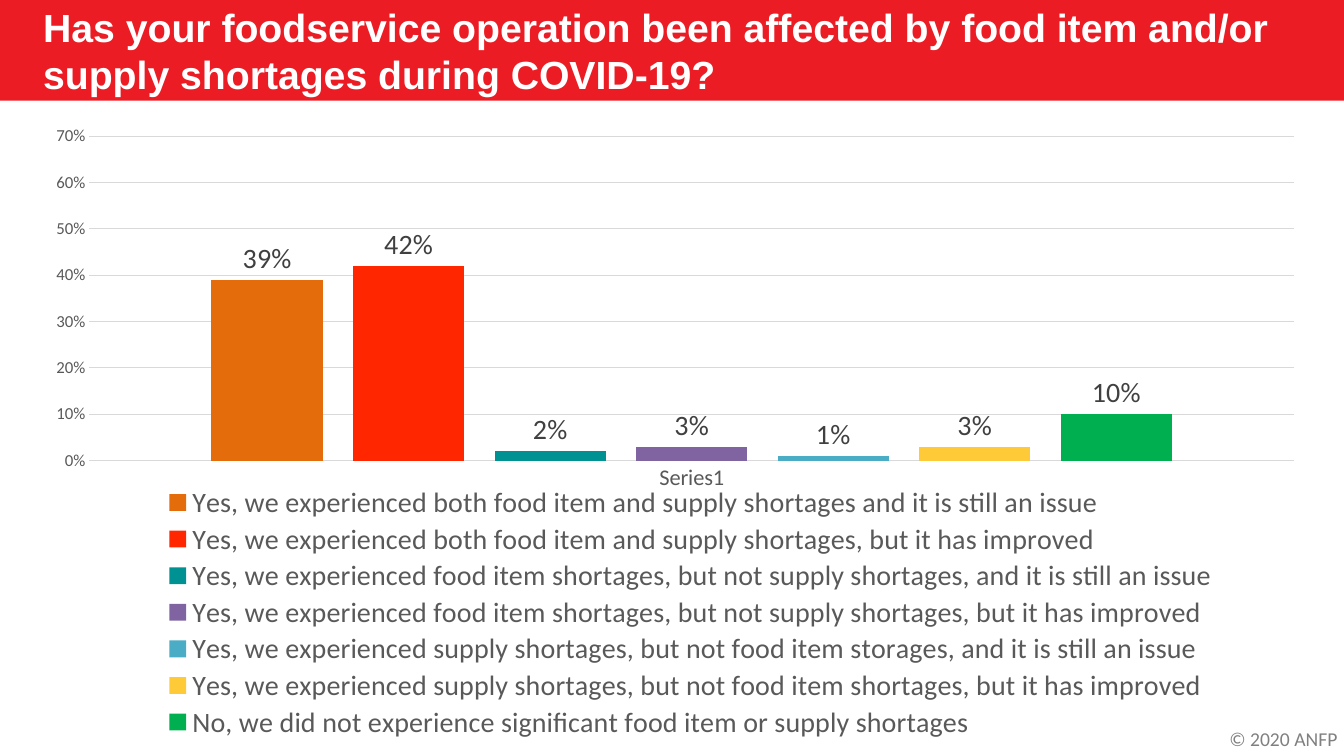
from lxml import etree
from pptx import Presentation
from pptx.chart.data import CategoryChartData
from pptx.dml.color import RGBColor
from pptx.enum.chart import XL_CHART_TYPE as ChartType, XL_LABEL_POSITION as LabelPos
from pptx.enum.chart import XL_LEGEND_POSITION as LegendPos, XL_TICK_MARK as TickMark
from pptx.enum.shapes import MSO_SHAPE as Shape
from pptx.enum.text import MSO_ANCHOR as Anchor, PP_ALIGN as Align
from pptx.oxml.ns import qn
from pptx.util import Inches, Pt

TITLE = ("Has your foodservice operation been affected by food item and/or "
         "supply shortages during COVID-19?")
COPYRIGHT = "© 2020 ANFP"
CATEGORY = "Series1"
ANSWERS = [
    ("Yes, we experienced both food item and supply shortages and it is still an issue", 0.39, "orange"),
    ("Yes, we experienced both food item and supply shortages, but it has improved", 0.42, "red"),
    ("Yes, we experienced food item shortages, but not supply shortages, and it is still an issue", 0.02, "teal"),
    ("Yes, we experienced food item shortages, but not supply shortages, but it has improved", 0.03, "purple"),
    ("Yes, we experienced supply shortages, but not food item storages, and it is still an issue", 0.01, "blue"),
    ("Yes, we experienced supply shortages, but not food item shortages, but it has improved", 0.03, "yellow"),
    ("No, we did not experience significant food item or supply shortages", 0.10, "green"),
]
COLORS = {
    "banner": "EC1C24", "title": "FFFFFF", "copyright": "808080",
    "text": "595959", "label": "404040", "grid": "D9D9D9", "base": "000000",
    "orange": "E46C0A", "red": "FF2600", "teal": "009193", "purple": "8064A2",
    "blue": "4BACC6", "yellow": "FFCA38", "green": "00B050",
}
WIDTH, HEIGHT = 13.33, 7.5
BANNER_HEIGHT = 1
MARGIN = 0.33
EDGES = {"xMode": "edge", "yMode": "edge"}
PLOT = {"layoutTarget": "inner", **EDGES, "x": 0.044, "y": 0.029, "w": 0.943, "h": 0.515}
LEGEND = {**EDGES, "x": 0.09, "y": 0.58, "w": 0.85, "h": 0.41}


def rgb(name):
    return RGBColor.from_string(COLORS[name])


def set_font(font, size, color, name="Calibri", bold=False):
    font.size, font.name, font.bold = Pt(size), name, bold
    font.color.rgb = rgb(color)


def set_line(fmt):
    fmt.line.color.rgb = rgb("grid")
    fmt.line.width = Pt(0.75)


def add_text(s, box, text, size, color, name="Calibri", bold=False, align=None, anchor=Anchor.TOP):
    tf = s.shapes.add_textbox(*map(Inches, box)).text_frame
    tf.word_wrap = True
    tf.vertical_anchor = anchor
    p = tf.paragraphs[0]
    p.text = text
    p.alignment = align
    set_font(p.font, size, color, name, bold)


def place(part, index, settings):
    for old in part.findall(qn("c:layout")):
        part.remove(old)
    layout = etree.Element(qn("c:layout"))
    manual = etree.SubElement(layout, qn("c:manualLayout"))
    for tag, value in settings.items():
        etree.SubElement(manual, qn(f"c:{tag}")).set("val", str(value))
    part.insert(index, layout)


def add_answers_chart(s):
    data = CategoryChartData(number_format="0%")
    data.categories = [CATEGORY]
    for answer, share, _ in ANSWERS:
        data.add_series(answer, [share])
    box = (MARGIN, 1.17, WIDTH - 2 * MARGIN, 6.25)
    chart = s.shapes.add_chart(ChartType.COLUMN_CLUSTERED, *map(Inches, box), data).chart
    set_font(chart.font, 10, "base")
    chart.has_title = False
    chart.has_legend = True
    chart.legend.position = LegendPos.BOTTOM
    chart.legend.include_in_layout = False
    set_font(chart.legend.font, 20, "text")

    for axis, size in ((chart.category_axis, 16), (chart.value_axis, 12)):
        axis.major_tick_mark = axis.minor_tick_mark = TickMark.NONE
        set_font(axis.tick_labels.font, size, "text")
    set_line(chart.category_axis.format)
    values = chart.value_axis
    values.minimum_scale, values.maximum_scale, values.major_unit = 0, 0.7, 0.1
    values.tick_labels.number_format = "0%"
    values.tick_labels.number_format_is_linked = False
    values.format.line.fill.background()
    set_line(values.major_gridlines.format)

    plot = chart.plots[0]
    plot.gap_width, plot.overlap, plot.vary_by_categories = 219, -27, False
    for series, (_, _, color) in zip(plot.series, ANSWERS):
        series.format.fill.solid()
        series.format.fill.fore_color.rgb = rgb(color)
        labels = series.data_labels
        labels.show_value = True
        labels.position = LabelPos.OUTSIDE_END
        set_font(labels.font, 20, "label")
    place(plot._element.getparent(), 0, PLOT)
    place(chart.legend._element, 1, LEGEND)


def main():
    prs = Presentation()
    prs.slide_width, prs.slide_height = Inches(WIDTH), Inches(HEIGHT)
    s = prs.slides.add_slide(prs.slide_layouts[6])
    banner = s.shapes.add_shape(Shape.RECTANGLE, 0, 0, prs.slide_width, Inches(BANNER_HEIGHT))
    banner.shadow.inherit = False
    banner.fill.solid()
    banner.fill.fore_color.rgb = rgb("banner")
    banner.line.fill.background()
    add_text(s, (MARGIN, 0.12, 12.84, 0.75), TITLE, 28, "title", "Arial", True, anchor=Anchor.MIDDLE)
    add_answers_chart(s)
    add_text(s, (12.08, 7.16, 1.3, 0.34), COPYRIGHT, 14, "copyright", align=Align.CENTER)
    prs.save("out.pptx")


if __name__ == "__main__":
    main()
